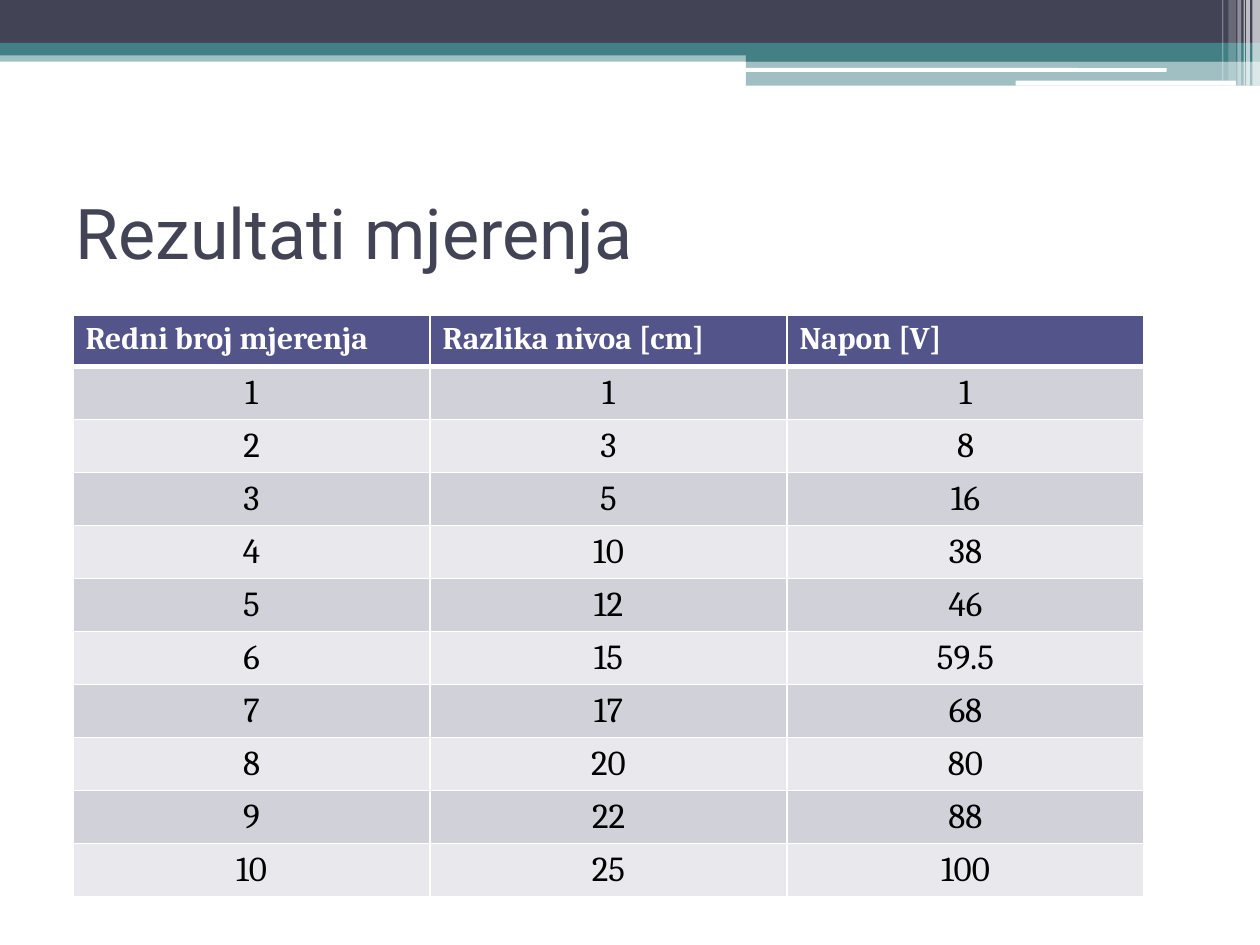
from pptx import Presentation
from pptx.dml.color import RGBColor
from pptx.enum.shapes import MSO_SHAPE as Shape
from pptx.enum.text import MSO_ANCHOR as Anchor, PP_ALIGN as Align
from pptx.oxml import parse_xml
from pptx.oxml.ns import nsdecls, qn
from pptx.util import Inches, Pt
from lxml.etree import SubElement

WHITE = RGBColor(0xFF, 0xFF, 0xFF)
BLACK = RGBColor(0, 0, 0)
SLATE = RGBColor(0x42, 0x44, 0x56)
TEAL = RGBColor(0x43, 0x80, 0x86)
HEADER = RGBColor(0x53, 0x54, 0x8A)
BANDS = RGBColor(0xD1, 0xD1, 0xDA), RGBColor(0xE9, 0xE9, 0xED)

COLUMNS, ROWS = 100, 75  # grid of the slide

# left, top, width, height, colour, opacity in percent
BARS = [
    (0, 4, 100, 0.9, TEAL, 50),
    (0, 0, 100, 3.4, SLATE, 100),
    (0, 3.4, 100, 1, TEAL, 100),
    (59.2, 3.9, 40.8, 1, TEAL, 100),
    (59.2, 4.8, 40.8, 2, TEAL, 50),
]
HIGHLIGHTS = [(59.1, 5.4, 33.5, 0.3), (80.6, 6.4, 17.5, 0.4)]
# left, width, height, opacity of the stripes in the top right corner
STRIPES = [
    (99.4, 0.6, 6.8, 65),
    (98.9, 0.3, 6.8, 65),
    (98.7, 0.1, 6.8, 60),
    (98.2, 0.3, 6.8, 40),
    (97.5, 0.6, 6.4, 20),
    (97, 0.1, 6.4, 30),
]

HEADINGS = ["Redni broj mjerenja", "Razlika nivoa [cm]", "Napon [V]"]
LEVELS = [1, 3, 5, 10, 12, 15, 17, 20, 22, 25]
VOLTAGES = [1, 8, 16, 38, 46, 59.5, 68, 80, 88, 100]


class SlideBuilder:
    title_font = "Roboto"
    table_font = "Cambria"

    def __init__(self, deck):
        self.slide = deck.slides.add_slide(deck.slide_layouts[5])
        self.column = deck.slide_width / COLUMNS
        self.row = deck.slide_height / ROWS

    def box(self, left, top, width, height):
        """Turn grid units into slide lengths."""
        return (round(left * self.column), round(top * self.row),
                round(width * self.column), round(height * self.row))

    def add_text(self, paragraph, text, font, size, color, bold=False):
        run = paragraph.add_run()
        run.text = text
        run.font.name, run.font.size, run.font.bold = font, Pt(size), bold
        run.font.color.rgb = color

    def title(self, text, *place):
        title = self.slide.shapes.title
        title.left, title.top, title.width, title.height = self.box(*place)
        title.text_frame.vertical_anchor = Anchor.MIDDLE
        paragraph = title.text_frame.paragraphs[0]
        paragraph.alignment = Align.LEFT
        self.add_text(paragraph, text, self.title_font, 40, SLATE)

    def bar(self, *place, color=WHITE, opacity=100, kind=Shape.RECTANGLE):
        bar = self.slide.shapes.add_shape(kind, *self.box(*place))
        bar.shadow.inherit = False
        bar.fill.solid()
        bar.fill.fore_color.rgb = color
        bar.line.fill.background()
        if opacity < 100:
            shade = bar.element.spPr.find(f".//{qn('a:srgbClr')}")
            SubElement(shade, qn("a:alpha"), val=str(opacity * 1000))

    def cell_borders(self, cell, bottom):
        properties = cell._tc.get_or_add_tcPr()
        widths = {"lnL": 1, "lnR": 1, "lnT": 1, "lnB": bottom}
        for position, (side, width) in enumerate(widths.items()):
            properties.insert(position, parse_xml(
                f'<a:{side} {nsdecls("a")} w="{int(Pt(width))}"><a:solidFill>'
                f'<a:srgbClr val="{WHITE}"/></a:solidFill></a:{side}>'))

    def cell(self, cell, text, fill, is_heading):
        cell.fill.solid()
        cell.fill.fore_color.rgb = fill
        self.cell_borders(cell, bottom=3 if is_heading else 1)
        paragraph = cell.text_frame.paragraphs[0]
        if is_heading:
            self.add_text(paragraph, text, self.table_font, 18, WHITE, bold=True)
        else:
            paragraph.alignment = Align.CENTER
            self.add_text(paragraph, text, self.table_font, 20, BLACK)

    def table(self, records, *place):
        table = self.slide.shapes.add_table(
            len(records), len(records[0]), *self.box(*place)).table
        for number, record in enumerate(records):
            fill = BANDS[(number - 1) % 2] if number else HEADER
            for column, value in enumerate(record):
                self.cell(table.cell(number, column), str(value), fill, number == 0)


def main():
    deck = Presentation()
    deck.slide_width, deck.slide_height = Inches(10), Inches(7.5)
    results = SlideBuilder(deck)
    for *place, color, opacity in BARS:
        results.bar(*place, color=color, opacity=opacity)
    for place in HIGHLIGHTS:
        results.bar(*place, kind=Shape.ROUNDED_RECTANGLE)
    for left, width, height, opacity in STRIPES:
        results.bar(left, 0, width, height, opacity=opacity)
    results.title("Rezultati mjerenja", 5, 12.5, 90, 11.7)
    measurements = zip(range(1, len(LEVELS) + 1), LEVELS, VOLTAGES)
    results.table([HEADINGS, *measurements], 5.8, 25, 85, 45.1)
    deck.save("out.pptx")


if __name__ == "__main__":
    main()
